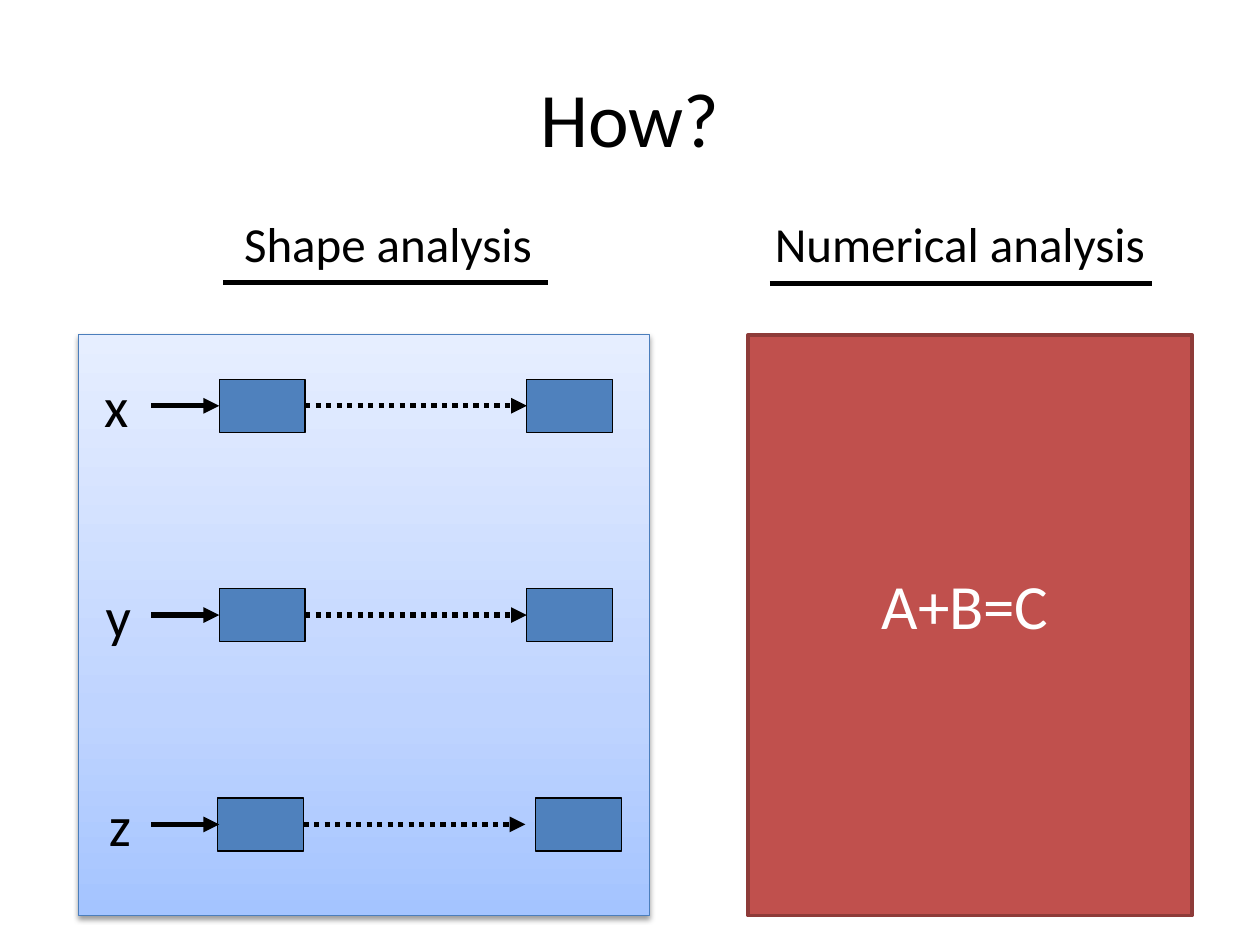
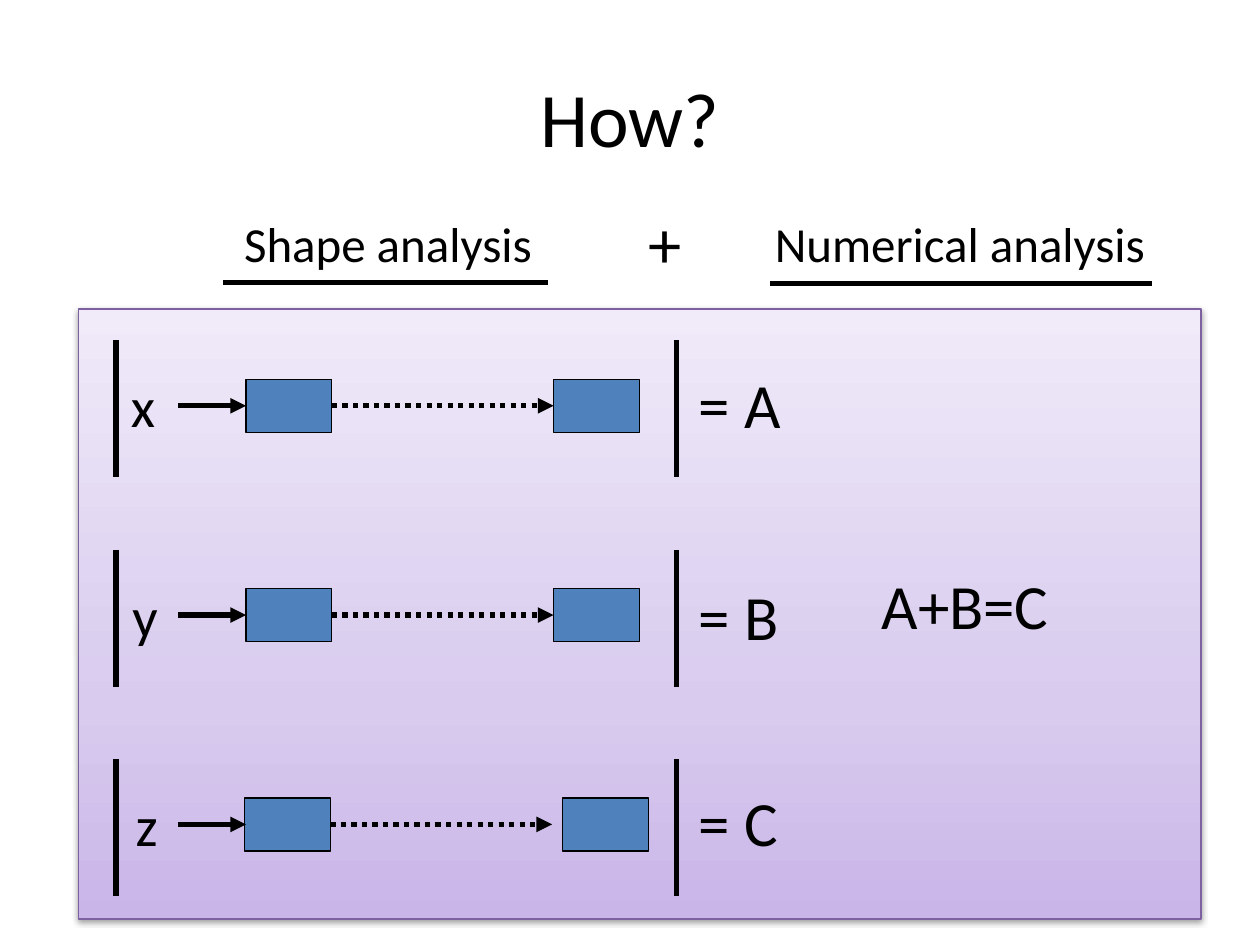
from lxml.etree import SubElement
from pptx import Presentation
from pptx.dml.color import RGBColor
from pptx.enum.dml import MSO_LINE
from pptx.enum.shapes import MSO_CONNECTOR, MSO_SHAPE
from pptx.enum.text import MSO_ANCHOR, PP_ALIGN
from pptx.oxml.ns import qn
from pptx.util import Cm, Pt

COLOURS = {
    "ink": "000000",
    "paper": "FFFFFF",
    "node": "4F81BD",
    "red": "C0504D",
    "red_edge": "8E3B39",
    "blue_edge": "4B7EBC",
    "purple_edge": "7D60A0",
}
GRADIENTS = {
    "blue": ((0, "A4C4FF"), (35, "BFD4FF"), (100, "E6EEFF")),
    "purple": ((0, "C9B5E8"), (35, "D8CBEE"), (100, "F0EAF9")),
}
SHADOW = {"blurRad": "40000", "dist": "20000", "dir": "5400000", "rotWithShape": "0"}
MARGINS = {
    PP_ALIGN.LEFT: {"margin_left": Cm(0.25), "margin_right": 0},
    PP_ALIGN.RIGHT: {"margin_left": 0, "margin_right": Cm(0.25)},
    PP_ALIGN.CENTER: {"margin_left": Cm(0.25), "margin_right": Cm(0.25)},
}

FIRST_ROW, ROW_PITCH = 8.18, 4.22
NODE_WIDTH, NODE_HEIGHT = 1.73, 1.07
LIST_LENGTH = 4.47
LISTS = (
    ("x", 1.98, 4.42, 10.62),
    ("y", 2.03, 4.42, 10.62),
    ("z", 2.03, 4.39, 10.8),
)
SIZES = (("= A", 7.24), ("= B", 11.51), ("= C", 15.67))


def apply(target, values):
    for name, value in values.items():
        setattr(target, name, value)


class SlideBuilder:
    def __init__(self, presentation, font="Calibri"):
        self.presentation = presentation
        self.font = font
        self.slide = None

    def start(self):
        layout = self.presentation.slide_layouts[6]
        self.slide = self.presentation.slides.add_slide(layout)

    def text(self, words, left, top, width, height, size,
             align=PP_ALIGN.RIGHT, anchor=MSO_ANCHOR.TOP, colour="ink"):
        shape = self.slide.shapes.add_textbox(Cm(left), Cm(top), Cm(width), Cm(height))
        frame = shape.text_frame
        apply(frame, {"word_wrap": True, "vertical_anchor": anchor, **MARGINS[align]})
        paragraph = frame.paragraphs[0]
        apply(paragraph, {"text": words, "alignment": align})
        font = paragraph.runs[0].font
        apply(font, {"name": self.font, "size": Pt(size)})
        font.color.rgb = RGBColor.from_string(COLOURS[colour])

    def rectangle(self, left, top, width, height, fill=None, edge="ink", weight=0.75):
        shape = self.slide.shapes.add_shape(
            MSO_SHAPE.RECTANGLE, Cm(left), Cm(top), Cm(width), Cm(height))
        if fill:
            shape.fill.solid()
            shape.fill.fore_color.rgb = RGBColor.from_string(COLOURS[fill])
        shape.line.color.rgb = RGBColor.from_string(COLOURS[edge])
        shape.line.width = Pt(weight)
        shape.shadow.inherit = False
        return shape

    def gradient_panel(self, left, top, width, height, gradient, edge):
        shape = self.rectangle(left, top, width, height, edge=edge)
        shape.fill.gradient()
        shape.fill.gradient_angle = 90
        properties = shape._element.spPr
        stops = properties.find(qn("a:gradFill")).find(qn("a:gsLst"))
        for stop in list(stops):
            stops.remove(stop)
        for position, colour in GRADIENTS[gradient]:
            stop = SubElement(stops, qn("a:gs"), pos=str(position * 1000))
            SubElement(stop, qn("a:srgbClr"), val=colour)
        effects = properties.find(qn("a:effectLst"))
        shadow = SubElement(effects, qn("a:outerShdw"), **SHADOW)
        black = SubElement(shadow, qn("a:srgbClr"), val=COLOURS["ink"])
        SubElement(black, qn("a:alpha"), val="38000")

    def line(self, start_x, start_y, end_x, end_y, arrow=False, dotted=False):
        connector = self.slide.shapes.add_connector(
            MSO_CONNECTOR.STRAIGHT, Cm(start_x), Cm(start_y), Cm(end_x), Cm(end_y))
        connector.line.color.rgb = RGBColor.from_string(COLOURS["ink"])
        connector.line.width = Pt(3)
        if dotted:
            connector.line.dash_style = MSO_LINE.ROUND_DOT
        properties = connector._element.spPr
        if arrow:
            SubElement(properties.find(qn("a:ln")), qn("a:tailEnd"), type="triangle")
        SubElement(properties, qn("a:effectLst"))

    def headings(self):
        middle = MSO_ANCHOR.MIDDLE
        self.text("How?", 1.27, 0.76, 22.86, 3.18, 44, PP_ALIGN.CENTER, middle)
        self.text("Shape analysis", 3.76, 4.17, 7.21, 1.45, 28, anchor=middle)
        self.line(4.5, 5.69, 11.05, 5.69)
        self.text("Numerical analysis", 15.37, 4.17, 8.05, 1.45, 28, PP_ALIGN.LEFT, middle)
        self.line(15.52, 5.72, 23.22, 5.72)

    def linked_lists(self, shift=0):
        for row, (name, label, first, second) in enumerate(LISTS):
            middle = FIRST_ROW + row * ROW_PITCH
            self.text(name, label + shift, middle - 0.81, 0.86, 1.6, 32)
            for node in (first, second):
                self.rectangle(node + shift, middle - NODE_HEIGHT / 2,
                               NODE_WIDTH, NODE_HEIGHT, "node")
            self.line(3.05 + shift, middle, 4.42 + shift, middle, arrow=True)
            link = first + NODE_WIDTH + shift
            self.line(link, middle, link + LIST_LENGTH, middle, arrow=True, dotted=True)

    def length_bars(self):
        for row in range(len(LISTS)):
            top = FIRST_ROW - 1.32 + row * ROW_PITCH
            for x in (2.34, 13.64):
                self.line(x, top, x, top + 2.76)

    def equation(self, colour):
        self.text("A+B=C", 17.48, 11.3, 3.91, 1.8, 36, colour=colour)


def separate_analyses(builder):
    builder.start()
    builder.gradient_panel(1.58, 6.75, 11.51, 11.71, "blue", "blue_edge")
    builder.headings()
    builder.linked_lists()
    builder.rectangle(15.08, 6.75, 8.95, 11.71, "red", "red_edge", 2)
    builder.equation("paper")


def combined_analysis(builder):
    builder.start()
    builder.gradient_panel(1.58, 6.23, 22.63, 12.3, "purple", "purple_edge")
    builder.headings()
    builder.text("+", 12.7, 3.96, 1.3, 1.85, 38, anchor=MSO_ANCHOR.MIDDLE)
    builder.linked_lists(shift=0.54)
    builder.length_bars()
    for words, top in SIZES:
        builder.text(words, 13.84, top, 2.16, 1.8, 36, PP_ALIGN.LEFT)
    builder.equation("ink")


def main():
    presentation = Presentation()
    apply(presentation, {"slide_width": Cm(25.4), "slide_height": Cm(19.05)})
    builder = SlideBuilder(presentation)
    separate_analyses(builder)
    combined_analysis(builder)
    presentation.save("out.pptx")


if __name__ == "__main__":
    main()
